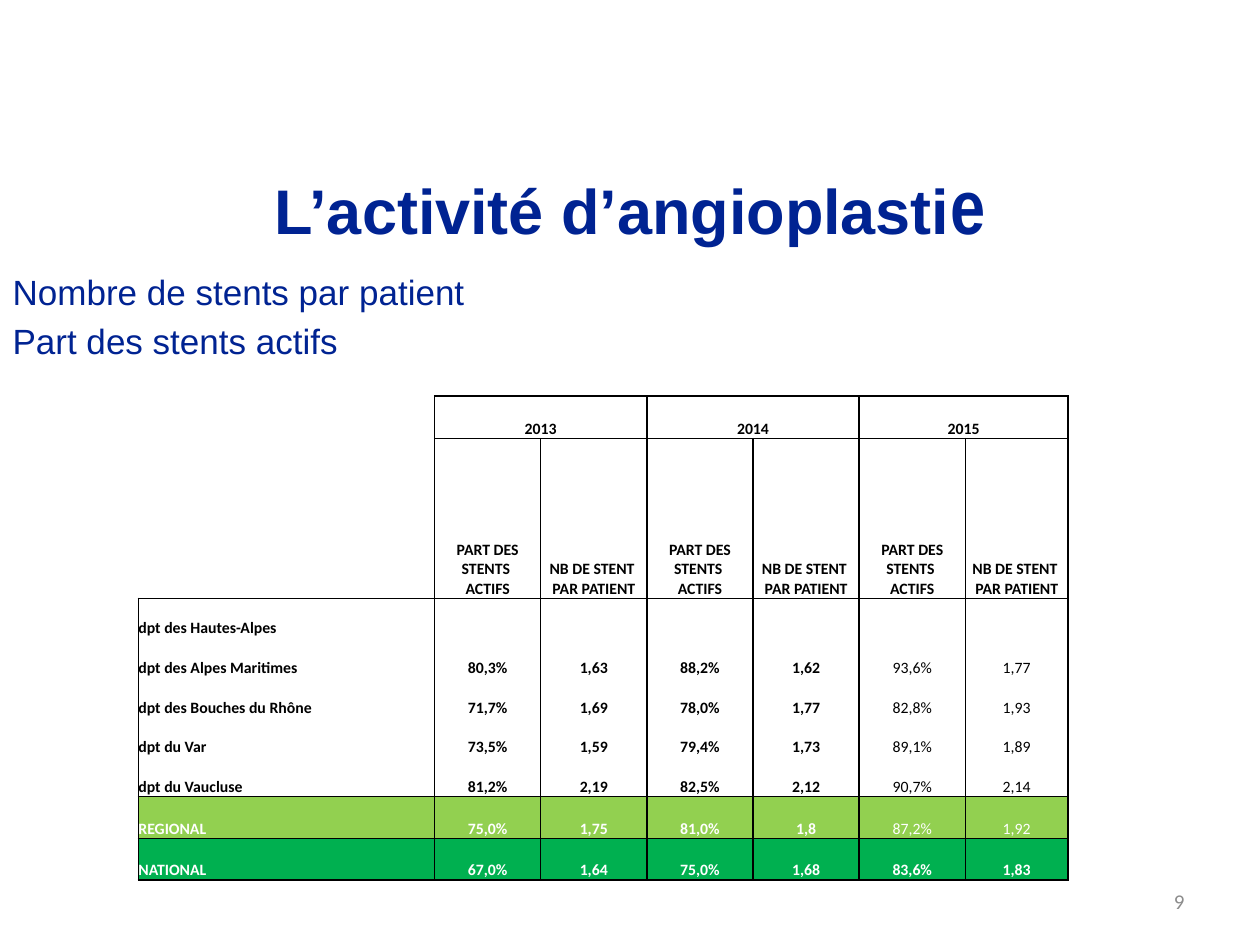
from pptx import Presentation
from pptx.dml.color import RGBColor
from pptx.enum.text import MSO_ANCHOR, MSO_AUTO_SIZE, PP_ALIGN
from pptx.oxml.ns import qn
from pptx.util import Cm, Pt
from lxml.etree import SubElement

NAVY = RGBColor(0x00, 0x23, 0x92)
BLACK = RGBColor(0x00, 0x00, 0x00)
WHITE = RGBColor(0xFF, 0xFF, 0xFF)
GREY = RGBColor(0x8C, 0x8C, 0x8C)
LIME = RGBColor(0x92, 0xD0, 0x50)
GREEN = RGBColor(0x00, 0xB0, 0x50)

YEARS = ["2013", "2014", "2015"]
MEASURES = ["PART DES STENTS \nACTIFS", "NB DE STENT \nPAR PATIENT"]
AREAS = [
    ["dpt des Hautes-Alpes"] + [""] * 6,
    ["dpt des Alpes Maritimes", "80,3%", "1,63", "88,2%", "1,62", "93,6%", "1,77"],
    ["dpt des Bouches du Rhône", "71,7%", "1,69", "78,0%", "1,77", "82,8%", "1,93"],
    ["dpt du Var", "73,5%", "1,59", "79,4%", "1,73", "89,1%", "1,89"],
    ["dpt du Vaucluse", "81,2%", "2,19", "82,5%", "2,12", "90,7%", "2,14"],
    ["REGIONAL", "75,0%", "1,75", "81,0%", "1,8", "87,2%", "1,92"],
    ["NATIONAL", "67,0%", "1,64", "75,0%", "1,68", "83,6%", "1,83"],
]
COLUMN_WIDTHS = [0.88, 5.97] + [2.14] * 5 + [2.07, 2.14]
ROW_HEIGHTS = [0.84, 0.86, 3.22] + [0.8] * 5 + [0.84, 0.84, 0.79]

LABEL_COL, FIRST_VALUE_COL, LAST_VALUE_COL = 1, 2, 7
YEAR_ROW, MEASURE_ROW, FIRST_AREA_ROW = 1, 2, 3
REGIONAL_ROW, NATIONAL_ROW = 8, 9
TOTAL_FILLS = {REGIONAL_ROW: LIME, NATIONAL_ROW: GREEN}


def style(paragraph, font_name, size, color, bold=False):
    font = paragraph.font
    font.name = font_name
    font.size = Pt(size)
    font.color.rgb = color
    font.bold = bold


def place(shape, left, top, width, height):
    shape.left, shape.top = Cm(left), Cm(top)
    shape.width, shape.height = Cm(width), Cm(height)


def add_title(slide):
    title = slide.shapes.title
    place(title, 1.27, 2.92, 22.86, 2.39)
    frame = title.text_frame
    frame.auto_size = MSO_AUTO_SIZE.NONE
    frame.vertical_anchor = MSO_ANCHOR.MIDDLE
    heading = frame.paragraphs[0]
    heading.alignment = PP_ALIGN.CENTER
    pieces = [("L’activité d’angioplasti", "Arial", 36), ("e", "Arial Narrow", 44)]
    for text, font_name, size in pieces:
        run = heading.add_run()
        run.text = text
        style(run, font_name, size, NAVY, True)


def add_topics(slide, topics):
    body = slide.placeholders[1]
    place(body, 0, 5.33, 25.4, 11)
    frame = body.text_frame
    frame.auto_size = MSO_AUTO_SIZE.NONE
    frame.text = "\n".join(topics)
    for index, topic in enumerate(frame.paragraphs):
        properties = topic._p.get_or_add_pPr()
        properties.set("marL", "0")
        properties.set("indent", "0")
        SubElement(properties, qn("a:buNone"))
        topic.space_before = Pt(4 if index else 0)
        style(topic, "Arial", 20, NAVY)


def add_page_number(slide, number):
    page = slide.shapes.add_textbox(Cm(18.21), Cm(17.65), Cm(5.92), Cm(1.02))
    frame = page.text_frame
    frame.word_wrap = True
    frame.vertical_anchor = MSO_ANCHOR.MIDDLE
    paragraph = frame.paragraphs[0]
    paragraph.text = number
    paragraph.alignment = PP_ALIGN.RIGHT
    style(paragraph, "Calibri", 12, GREY)


def line_above(row, col):
    rows = {FIRST_AREA_ROW, REGIONAL_ROW, NATIONAL_ROW, NATIONAL_ROW + 1}
    if FIRST_VALUE_COL <= col <= LAST_VALUE_COL:
        rows |= {YEAR_ROW, MEASURE_ROW}
    return LABEL_COL <= col <= LAST_VALUE_COL and row in rows


def line_left(row, col):
    first_row = FIRST_AREA_ROW if col == LABEL_COL else YEAR_ROW
    return LABEL_COL <= col <= LAST_VALUE_COL + 1 and first_row <= row <= NATIONAL_ROW


def set_borders(cell, row, col):
    properties = cell._tc.get_or_add_tcPr()
    edges = {
        "a:lnL": line_left(row, col),
        "a:lnR": line_left(row, col + 1),
        "a:lnT": line_above(row, col),
        "a:lnB": line_above(row + 1, col),
    }
    for tag, visible in edges.items():
        line = SubElement(properties, qn(tag), w=str(Pt(1)))
        if visible:
            fill = SubElement(line, qn("a:solidFill"))
            SubElement(fill, qn("a:srgbClr"), val=str(BLACK))
        else:
            SubElement(line, qn("a:noFill"))


def set_fill(cell, row, col):
    first_col = FIRST_VALUE_COL if row < FIRST_AREA_ROW else LABEL_COL
    in_grid = YEAR_ROW <= row <= NATIONAL_ROW and first_col <= col <= LAST_VALUE_COL
    if in_grid or row > NATIONAL_ROW:
        cell.fill.solid()
        cell.fill.fore_color.rgb = TOTAL_FILLS.get(row, WHITE)
    else:
        cell.fill.background()


def cell_texts():
    texts = {}
    for index, year in enumerate(YEARS):
        texts[YEAR_ROW, FIRST_VALUE_COL + 2 * index] = year
    for index, measure in enumerate(MEASURES * len(YEARS)):
        texts[MEASURE_ROW, FIRST_VALUE_COL + index] = measure
    for row, area in enumerate(AREAS, FIRST_AREA_ROW):
        for col, text in enumerate(area, LABEL_COL):
            texts[row, col] = text
    return texts


def write_cell(cell, row, col, text):
    cell.margin_left = cell.margin_right = cell.margin_top = cell.margin_bottom = 0
    cell.vertical_anchor = MSO_ANCHOR.BOTTOM
    paragraph = cell.text_frame.paragraphs[0]
    if text:
        paragraph.text = text.replace("\n", "\v")
    paragraph.alignment = PP_ALIGN.LEFT if col == LABEL_COL else PP_ALIGN.CENTER
    latest_value = col >= LAST_VALUE_COL - 1 and FIRST_AREA_ROW < row < NATIONAL_ROW
    color = WHITE if row in TOTAL_FILLS else BLACK
    style(paragraph, "Calibri", 9, color, not latest_value)


def add_stent_table(slide):
    table = slide.shapes.add_table(
        len(ROW_HEIGHTS), len(COLUMN_WIDTHS), Cm(1.91), Cm(7.14),
        Cm(sum(COLUMN_WIDTHS)), Cm(sum(ROW_HEIGHTS)),
    ).table
    table.first_row = table.horz_banding = False
    for column, width in zip(table.columns, COLUMN_WIDTHS):
        column.width = Cm(width)
    for row, height in zip(table.rows, ROW_HEIGHTS):
        row.height = Cm(height)
    for col in range(FIRST_VALUE_COL, LAST_VALUE_COL, 2):
        table.cell(YEAR_ROW, col).merge(table.cell(YEAR_ROW, col + 1))
    texts = cell_texts()
    for row in range(len(ROW_HEIGHTS)):
        for col in range(len(COLUMN_WIDTHS)):
            cell = table.cell(row, col)
            write_cell(cell, row, col, texts.get((row, col), ""))
            set_borders(cell, row, col)
            set_fill(cell, row, col)


def main():
    prs = Presentation()
    prs.slide_width, prs.slide_height = Cm(25.4), Cm(19.05)
    slide = prs.slides.add_slide(prs.slide_layouts[1])
    add_title(slide)
    add_topics(slide, ["Nombre de stents par patient", "Part des stents actifs"])
    add_page_number(slide, "9")
    add_stent_table(slide)
    prs.save("out.pptx")


if __name__ == "__main__":
    main()
